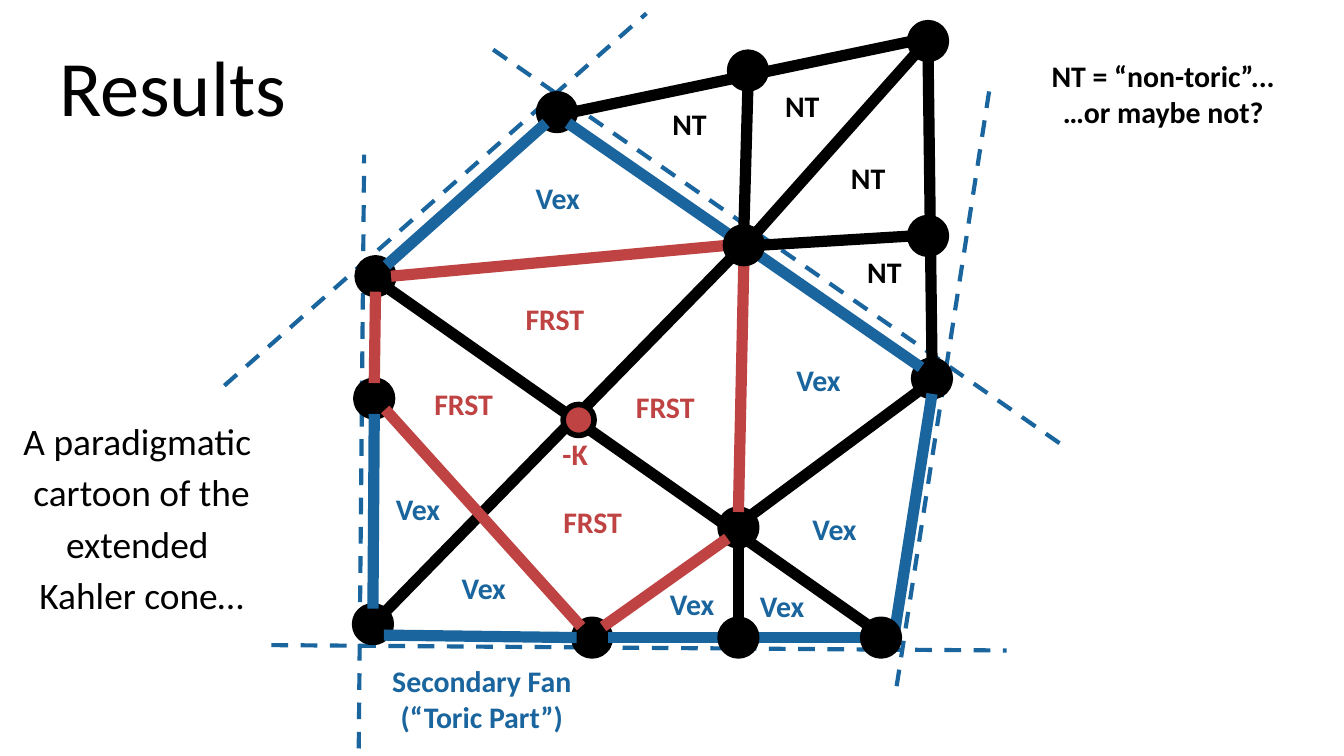
from lxml.etree import SubElement
from pptx import Presentation
from pptx.dml.color import RGBColor
from pptx.enum.dml import MSO_LINE
from pptx.enum.shapes import MSO_CONNECTOR, MSO_SHAPE
from pptx.enum.text import MSO_ANCHOR, MSO_AUTO_SIZE, PP_ALIGN
from pptx.oxml.ns import qn
from pptx.util import Pt

BLACK, RED, BLUE = "000000", "BF4342", "1A659E"
FONT = "Calibri"
RADIUS = 8.3
DIAGONAL = 5.87


def add_line(start, end, color, width):
    line = slide.shapes.add_connector(
        MSO_CONNECTOR.STRAIGHT, Pt(start[0]), Pt(start[1]), Pt(end[0]), Pt(end[1]))
    line.line.color.rgb = RGBColor.from_string(color)
    line.line.width = Pt(width)
    SubElement(line._element.spPr, qn("a:effectLst"))
    return line


def format_text(shape, text, size, color, bold, align):
    frame = shape.text_frame
    frame.word_wrap = True
    frame.margin_left = frame.margin_right = Pt(7.2)
    frame.margin_top = frame.margin_bottom = Pt(7.2)
    frame.text = text
    for paragraph in frame.paragraphs:
        paragraph.alignment = align
        for run in paragraph.runs:
            run.font.name = FONT
            run.font.size = Pt(size)
            run.font.bold = bold
            run.font.color.rgb = RGBColor.from_string(color)


presentation = Presentation()
presentation.slide_width, presentation.slide_height = Pt(720), Pt(405)
slide = presentation.slides.add_slide(presentation.slide_layouts[5])

title = slide.shapes.title
title.left, title.top, title.width, title.height = Pt(24.5), Pt(10.8), Pt(671), Pt(67)
format_text(title, "Results", 42, BLACK, False, PP_ALIGN.LEFT)
title.text_frame.vertical_anchor = MSO_ANCHOR.BOTTOM
title.text_frame.auto_size = MSO_AUTO_SIZE.NONE

boundaries = [
    ((192.2, 401), (195.1, 82.8)),
    ((145.4, 345.6), (539.3, 348.5)),
    ((529.9, 49), (480.2, 368.6)),
    ((264.2, 26.6), (571, 239.8)),
    ((120.2, 206.6), (346.3, 7.2)),
]
for start, end in boundaries:
    add_line(start, end, BLUE, 2.25).line.dash_style = MSO_LINE.DASH

nodes = {
    "upper left": (201.2, 148),
    "lower left": (199.8, 334.4),
    "junction": (395.6, 282.6),
    "left": (200.5, 213.5),
    "bottom": (317.2, 341.6),
    "right": (499.3, 202.7),
    "top": (298.4, 60.1),
    "canonical": (310, 225),
    "lower right": (472, 341.6),
    "ridge": (400.7, 37.8),
    "lower middle": (395.6, 341.6),
    "peak": (497.2, 22),
    "center": (398.5, 131.4),
    "east": (497.2, 126.4),
}
back_nodes = list(nodes)[:7]
front_nodes = list(nodes)[7:]

sites = {
    "N": (0, -RADIUS), "S": (0, RADIUS), "W": (-RADIUS, 0), "E": (RADIUS, 0),
    "NW": (-DIAGONAL, -DIAGONAL), "NE": (DIAGONAL, -DIAGONAL),
    "SW": (-DIAGONAL, DIAGONAL), "SE": (DIAGONAL, DIAGONAL),
}
edges = {
    BLACK: [
        ("upper left", "SE", "lower right", "NW"),
        ("lower left", "NE", "center", "SW"),
        ("top", "E", "peak", "W"),
        ("center", "NE", "peak", "SW"),
        ("right", "SW", "junction", "NE"),
        ("junction", "S", "lower middle", "N"),
        ("ridge", "S", "center", "N"),
        ("peak", "S", "right", "N"),
        ("center", "E", "east", "W"),
    ],
    RED: [
        ("left", "SE", "bottom", "NW"),
        ("upper left", "E", "center", "W"),
        ("center", "S", "junction", "N"),
        ("junction", "SW", "bottom", "NE"),
        ("left", "N", "upper left", "S"),
    ],
    BLUE: [
        ("lower left", "N", "left", "S"),
        ("bottom", "W", "lower left", "SE"),
        ("right", "S", "lower right", "SE"),
        ("top", "SE", "right", "NW"),
        ("top", "SW", "upper left", "NE"),
        ("bottom", "E", "lower right", "W"),
    ],
}

for layer in (back_nodes, front_nodes):
    for name in layer:
        x, y = nodes[name]
        dot = slide.shapes.add_shape(
            MSO_SHAPE.OVAL, Pt(x - RADIUS), Pt(y - RADIUS), Pt(2 * RADIUS), Pt(2 * RADIUS))
        dot.shadow.inherit = False
        dot.fill.solid()
        dot.fill.fore_color.rgb = RGBColor.from_string(RED if name == "canonical" else BLACK)
        dot.line.color.rgb = RGBColor.from_string(BLACK)
        dot.line.width = Pt(3 if name == "canonical" else 6)
    if layer is back_nodes:
        for color, pairs in edges.items():
            for first, first_site, second, second_site in pairs:
                start = [a + b for a, b in zip(nodes[first], sites[first_site])]
                end = [a + b for a, b in zip(nodes[second], sites[second_site])]
                add_line(start, end, color, 6)

regions = [
    ("FRST", RED, 66.2, [(264.2, 154.1), (323.3, 200.9), (284.4, 262.8), (215.3, 199.4)]),
    ("Vex", BLUE, 66.2, [(226.1, 298.1), (190.8, 255.6), (337.7, 306.7), (385.9, 307.4),
                         (414, 266.4), (405.4, 186.5), (265.7, 89.3)]),
    ("NT", BLACK, 57.6, [(340.6, 49.7), (401, 39.6), (436.3, 78.5), (445, 128.9)]),
    ("-K", RED, 66.2, [(275, 226.1)]),
]
labels = [(text, 16, color, True, left, top, width, 33.8)
          for text, color, width, places in regions for left, top in places]
labels += [
    ("NT = “non-toric”...\v…or maybe not?", 16, BLACK, True, 544.3, 23.8, 157.7, 53.3),
    ("Secondary Fan\n(“Toric Part”)", 16, BLUE, True, 179.3, 347.8, 157.7, 53.3),
    ("A paradigmatic \vcartoon of the\vextended \vKahler cone…", 20, BLACK, False,
     -63.4, 213.1, 278.6, 122.4),
]
for text, size, color, bold, left, top, width, height in labels:
    box = slide.shapes.add_textbox(Pt(left), Pt(top), Pt(width), Pt(height))
    format_text(box, text, size, color, bold, PP_ALIGN.CENTER)
    box.text_frame.auto_size = MSO_AUTO_SIZE.SHAPE_TO_FIT_TEXT

caption = box.text_frame.paragraphs[0]
caption.line_spacing = 1.15
caption.space_after = Pt(12)

presentation.save("out.pptx")
